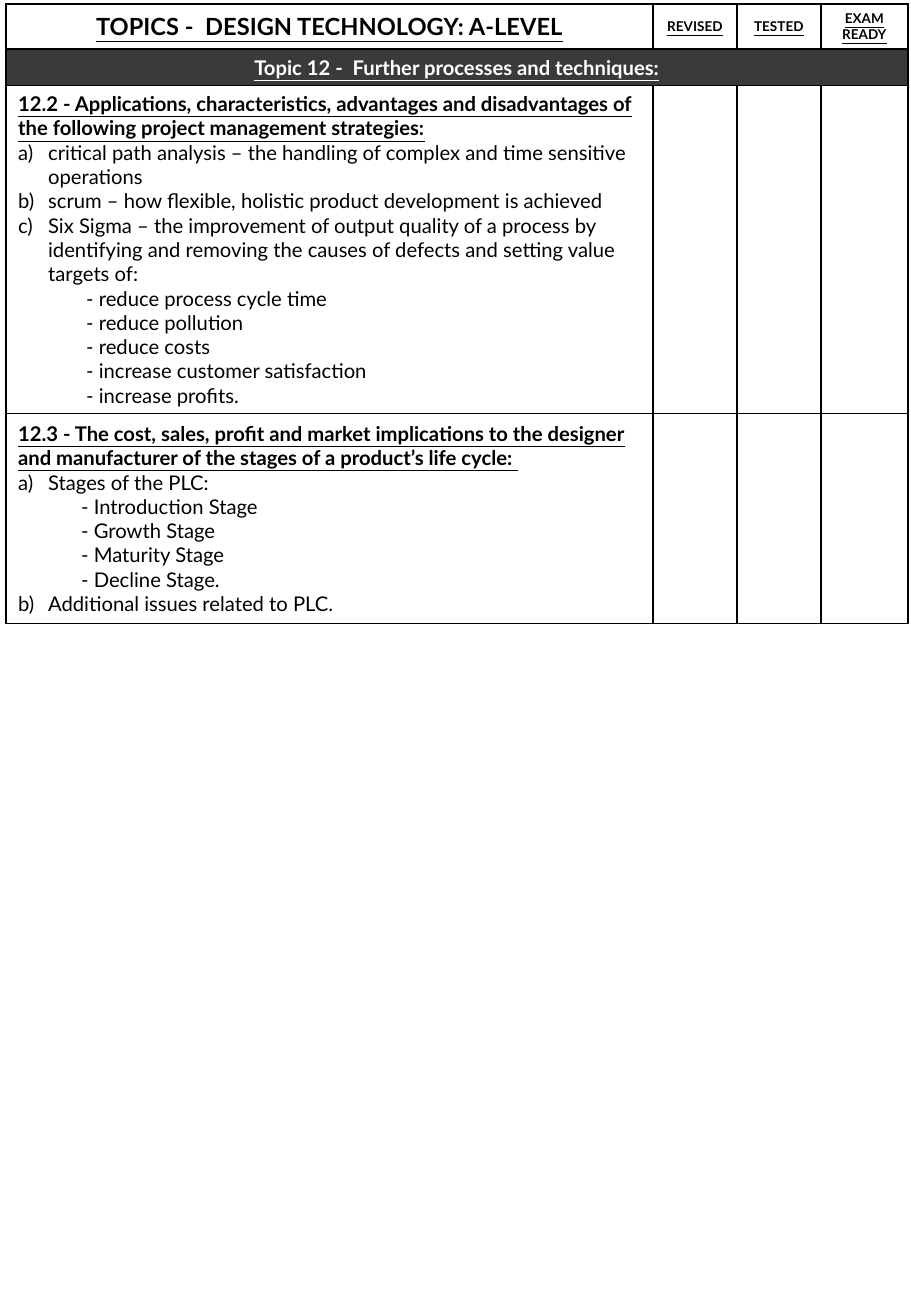
from dataclasses import dataclass

import pptx
import pptx.dml.color
import pptx.enum.text
import pptx.oxml
import pptx.oxml.ns
import pptx.util

RGBColor = pptx.dml.color.RGBColor
BLACK = RGBColor(0x00, 0x00, 0x00)
WHITE = RGBColor(0xFF, 0xFF, 0xFF)
CHARCOAL = RGBColor(0x3A, 0x3A, 0x3A)

FONT = "Lato"
PX_PER_INCH = 121.5
COLS = [647, 84, 84, 87]
ROWS = [45, 36, 328, 210]
LETTER_INDENT = 30


@dataclass
class Line:
    text: str
    size: int = 12
    heading: bool = False
    centred: bool = False
    color: RGBColor = BLACK
    letter: int = 0  # position in the a), b), c) list, 0 for none
    indent: int = 0


def px(n: int) -> pptx.util.Emu:
    return pptx.util.Emu(round(n * 914400 / PX_PER_INCH))


def heading(text: str) -> Line:
    return Line(text, heading=True)


def banner(text: str, size: int, color: RGBColor = BLACK) -> Line:
    return Line(text, size, heading=True, centred=True, color=color)


def lettered(*texts: str) -> list[Line]:
    return [Line(t, letter=n) for n, t in enumerate(texts, 1)]


def dashed(indent: int, *texts: str) -> list[Line]:
    return [Line(f"- {t}", indent=indent) for t in texts]


def write_line(p, line: Line) -> None:
    p.alignment = (pptx.enum.text.PP_ALIGN.CENTER if line.centred
                   else pptx.enum.text.PP_ALIGN.LEFT)
    pPr = p._p.get_or_add_pPr()
    if line.letter:
        pPr.set("marL", str(px(LETTER_INDENT)))
        pPr.set("indent", str(-px(LETTER_INDENT)))
        font = pptx.oxml.parse_xml(
            f'<a:buFont {pptx.oxml.ns.nsdecls("a")} typeface="{FONT}"/>')
        number = pptx.oxml.parse_xml(
            f'<a:buAutoNum {pptx.oxml.ns.nsdecls("a")} '
            f'type="alphaLcParenR" startAt="{line.letter}"/>')
        # Consecutive items share the start value of their list
        pPr.extend([font, number])
    elif line.indent:
        pPr.set("marL", str(px(line.indent)))
        pPr.set("indent", "0")
    r = p.add_run()
    r.text = line.text
    formats = {"name": FONT, "size": pptx.util.Pt(line.size),
               "bold": line.heading, "underline": line.heading}
    for name, value in formats.items():
        setattr(r.font, name, value)
    r.font.color.rgb = line.color


def style_cell(cell, fill: RGBColor) -> None:
    tcPr = cell._tc.get_or_add_tcPr()
    for side in ("lnL", "lnR", "lnT", "lnB"):
        tcPr.append(pptx.oxml.parse_xml(
            f'<a:{side} {pptx.oxml.ns.nsdecls("a")} w="{pptx.util.Pt(1)}">'
            f'<a:solidFill><a:srgbClr val="{BLACK}"/></a:solidFill></a:{side}>'))
    cell.fill.solid()
    cell.fill.fore_color.rgb = fill
    cell.vertical_anchor = pptx.enum.text.MSO_ANCHOR.MIDDLE


def write_cell(cell, lines: list[Line]) -> None:
    tf = cell.text_frame
    start = 1
    for i, line in enumerate(lines):
        p = tf.paragraphs[0] if i == 0 else tf.add_paragraph()
        if line.letter:
            # A list broken by other lines resumes at its own letter
            start = start if i and lines[i - 1].letter else line.letter
            line.letter = start
        write_line(p, line)


# Checklist wording
HEADER = [
    banner("TOPICS -  DESIGN TECHNOLOGY: A-LEVEL", 14),
    banner("REVISED", 8),
    banner("TESTED", 8),
    banner("EXAM READY", 8),
]
TOPIC = banner("Topic 12 -  Further processes and techniques:", 12, WHITE)
STRATEGIES = [
    heading("12.2 - Applications, characteristics, advantages and disadvantages "
            "of the following project management strategies:"),
    *lettered(
        "critical path analysis – the handling of complex and time sensitive operations",
        "scrum – how flexible, holistic product development is achieved",
        "Six Sigma – the improvement of output quality of a process by identifying "
        "and removing the causes of defects and setting value targets of:"),
    *dashed(68, "reduce process cycle time", "reduce pollution", "reduce costs",
            "increase customer satisfaction", "increase profits."),
]
STAGES, ISSUES = lettered("Stages of the PLC:", "Additional issues related to PLC.")
LIFE_CYCLE = [
    heading("12.3 - The cost, sales, profit and market implications to the designer "
            "and manufacturer of the stages of a product’s life cycle: "),
    STAGES,
    *dashed(63, "Introduction Stage", "Growth Stage", "Maturity Stage",
            "Decline Stage."),
    ISSUES,
]


def main() -> None:
    prs = pptx.Presentation()
    prs.slide_width, prs.slide_height = px(911), px(1316)
    s = prs.slides.add_slide(prs.slide_layouts[6])

    # Table grid
    table = s.shapes.add_table(len(ROWS), len(COLS), px(6), px(4),
                               px(sum(COLS)), px(sum(ROWS))).table
    table.first_row = table.horz_banding = False
    for column, width in zip(table.columns, COLS):
        column.width = px(width)
    for row, height in zip(table.rows, ROWS):
        row.height = px(height)
    for i, row in enumerate(table.rows):
        for cell in row.cells:
            style_cell(cell, CHARCOAL if i == 1 else WHITE)
    table.cell(1, 0).merge(table.cell(1, len(COLS) - 1))

    # Table text
    for c, title in enumerate(HEADER):
        write_cell(table.cell(0, c), [title])
    for i, lines in enumerate([[TOPIC], STRATEGIES, LIFE_CYCLE], 1):
        write_cell(table.cell(i, 0), lines)

    prs.save("out.pptx")


if __name__ == "__main__":
    main()
